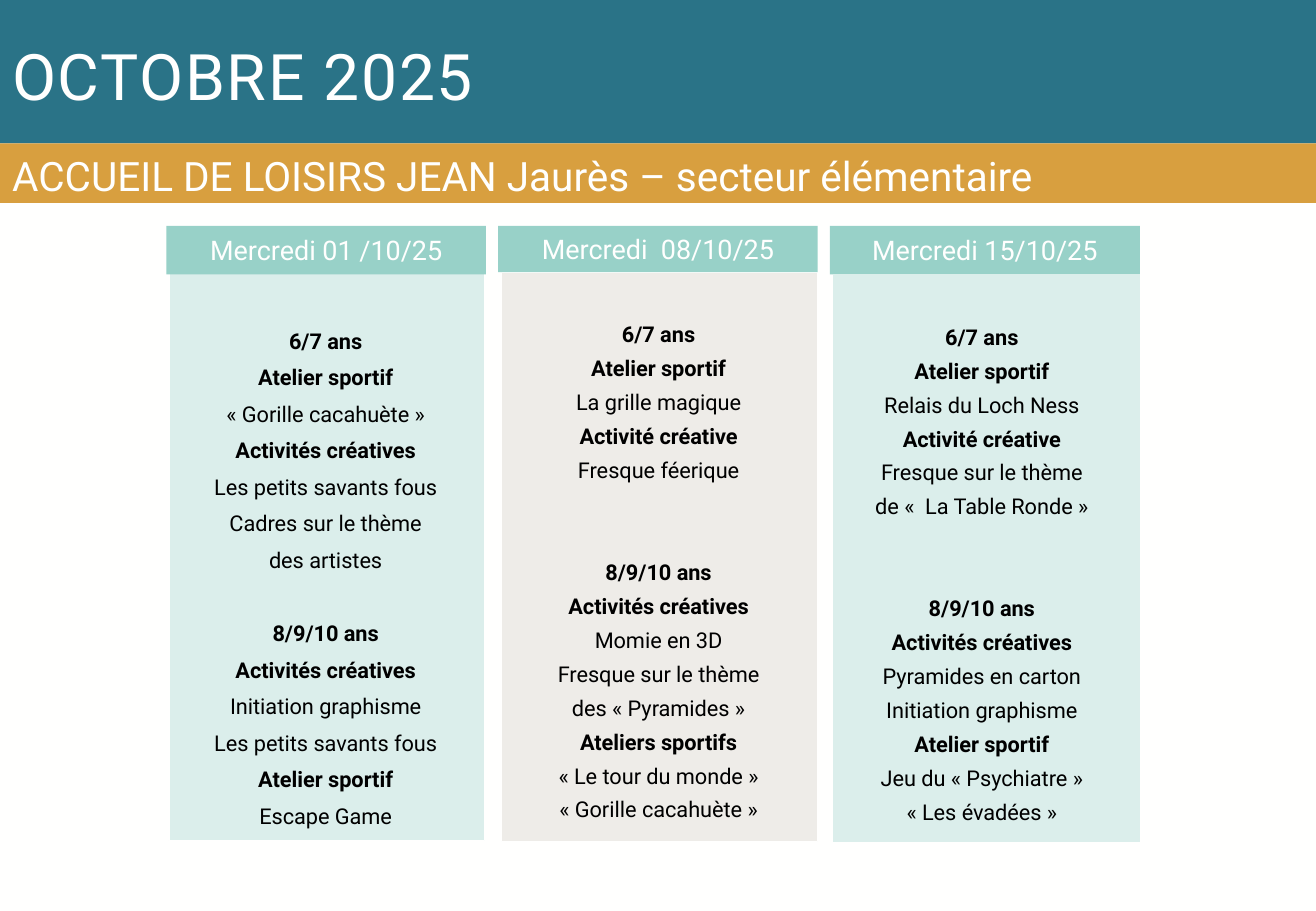
from dataclasses import dataclass

from lxml import etree
from pptx import Presentation
from pptx.dml.color import RGBColor
from pptx.enum.shapes import MSO_SHAPE
from pptx.enum.text import MSO_ANCHOR, MSO_AUTO_SIZE, PP_ALIGN
from pptx.oxml.ns import qn
from pptx.util import Pt

PX = 9144  # EMU, 100 px to the inch
RECT = MSO_SHAPE.RECTANGLE
TOP, MIDDLE = MSO_ANCHOR.TOP, MSO_ANCHOR.MIDDLE
LEFT, CENTER = PP_ALIGN.LEFT, PP_ALIGN.CENTER
FIXED = MSO_AUTO_SIZE.NONE
COMPARE = 4  # layout with a title and four bodies


@dataclass(frozen=True)
class Theme:
    font: str = "Roboto"
    paper: str = "FFFFFE"
    ink: str = "000000"
    blue: str = "2A7387"
    gold: str = "D89F3F"
    mint: str = "98D1C8"
    sand: str = "EEECE8"
    title: float = 38
    band: float = 24
    head: float = 16
    text: float = 12.9


@dataclass(frozen=True)
class Day:
    date: str
    head: tuple
    panel: tuple
    pad: tuple
    fill: str
    clear: int  # opacity in percent
    pitch: float
    gap: float  # points between the two age groups
    lines: tuple


THEME = Theme()
DAYS = (
    Day("Mercredi 01 /10/25", (137, 186, 263, 40), (139, 224, 260, 468),
        (5, 37, 7, 0), THEME.mint, 35, 1.4, 21.7,
        ("6/7 ans", "Atelier sportif", "« Gorille cacahuète »",
         "Activités créatives", "Les petits savants fous",
         "Cadres sur le thème", "des artistes",
         "8/9/10 ans", "Activités créatives", "Initiation graphisme",
         "Les petits savants fous", "Atelier sportif", "Escape Game")),
    Day("Mercredi  08/10/25", (410, 186, 263, 38), (413, 224, 260, 469),
        (5, 34, 7, 0), THEME.sand, 100, 1.3, 40.4,
        ("6/7 ans", "Atelier sportif", "La grille magique",
         "Activité créative", "Fresque féerique",
         "8/9/10 ans", "Activités créatives", "Momie en 3D",
         "Fresque sur le thème", "des « Pyramides »",
         "Ateliers sportifs", "« Le tour du monde »",
         "« Gorille cacahuète »")),
    Day("Mercredi 15/10/25", (683, 186, 255, 40), (685, 226, 254, 468),
        (2, 34, 10, 0), THEME.mint, 35, 1.3, 40.4,
        ("6/7 ans", "Atelier sportif", "Relais du Loch Ness",
         "Activité créative", "Fresque sur le thème",
         "de «  La Table Ronde »",
         "8/9/10 ans", "Activités créatives", "Pyramides en carton",
         "Initiation graphisme", "Atelier sportif",
         "Jeu du « Psychiatre »", "« Les évadées »")),
)


def color(code):
    return RGBColor.from_string(code)


def place(shape, box):
    shape.left, shape.top, shape.width, shape.height = (n * PX for n in box)


def paint(shape, code, clear=100):
    shape.fill.solid()
    shape.fill.fore_color.rgb = color(code)
    if clear < 100:
        tone = shape._element.spPr.find(".//" + qn("a:srgbClr"))
        etree.SubElement(tone, qn("a:alpha"), val=str(clear * 1000))


def setup(shape, pad, anchor):
    frame = shape.text_frame
    frame.word_wrap = True
    frame.auto_size = FIXED
    frame.vertical_anchor = anchor
    (frame.margin_left, frame.margin_top,
     frame.margin_right, frame.margin_bottom) = (n * PX for n in pad)
    return frame


def write(para, text, size, code, align=CENTER, bold=False):
    """Fill a paragraph that has no bullet and no indent."""
    para.text = text
    props = para._p.get_or_add_pPr()
    props.set("marL", "0")
    props.set("indent", "0")
    etree.SubElement(props, qn("a:buNone"))
    para.alignment = align
    para.space_before = para.space_after = Pt(0)
    font = para.font
    font.name, font.size, font.bold = THEME.font, Pt(size), bold
    font.color.rgb = color(code)


def banner(shape, box, fill, text, size, pad):
    place(shape, box)
    paint(shape, fill)
    para = setup(shape, pad, MIDDLE).paragraphs[0]
    write(para, text, size, THEME.paper, LEFT)
    return para


def header(slide, day):
    shape = slide.shapes.add_shape(RECT, *(n * PX for n in day.head))
    shape.shadow.inherit = False
    paint(shape, day.fill if day.clear < 100 else THEME.mint)
    shape.line.fill.background()
    frame = setup(shape, (5, 5, 5, 5), MIDDLE)
    write(frame.paragraphs[0], day.date, THEME.head, THEME.paper)


def strong(text):
    """Age groups and kinds of activity are bold."""
    return text.endswith(" ans") or text.startswith(("Atelier", "Activité"))


def column(shape, day):
    place(shape, day.panel)
    paint(shape, day.fill, day.clear)
    shape.line.color.rgb = color(THEME.paper)
    shape.line.width = Pt(0.75)
    frame = setup(shape, day.pad, TOP)
    for i, text in enumerate(day.lines):
        para = frame.add_paragraph() if i else frame.paragraphs[0]
        write(para, text, THEME.text, THEME.ink, bold=strong(text))
        para.line_spacing = day.pitch
        if i and text.endswith(" ans"):
            para.space_before = Pt(day.gap)


def main():
    deck = Presentation()
    deck.slide_width, deck.slide_height = 1083 * PX, 750 * PX
    slide = deck.slides.add_slide(deck.slide_layouts[COMPARE])
    slide.background.fill.solid()
    slide.background.fill.fore_color.rgb = color(THEME.paper)
    title, band, *bodies = slide.placeholders
    para = banner(title, (0, 0, 1083, 118), THEME.blue, "OCTOBRE 2025",
                  THEME.title, (10, 6, 10, 0))
    para.runs[0]._r.get_or_add_rPr().set("spc", "100")
    banner(band, (0, 118, 1083, 49), THEME.gold,
           "ACCUEIL DE LOISIRS JEAN Jaurès – secteur élémentaire",
           THEME.band, (10, 8, 10, 4))
    for body, day in zip(bodies, DAYS):
        column(body, day)
        header(slide, day)
    deck.save("out.pptx")


if __name__ == "__main__":
    main()
